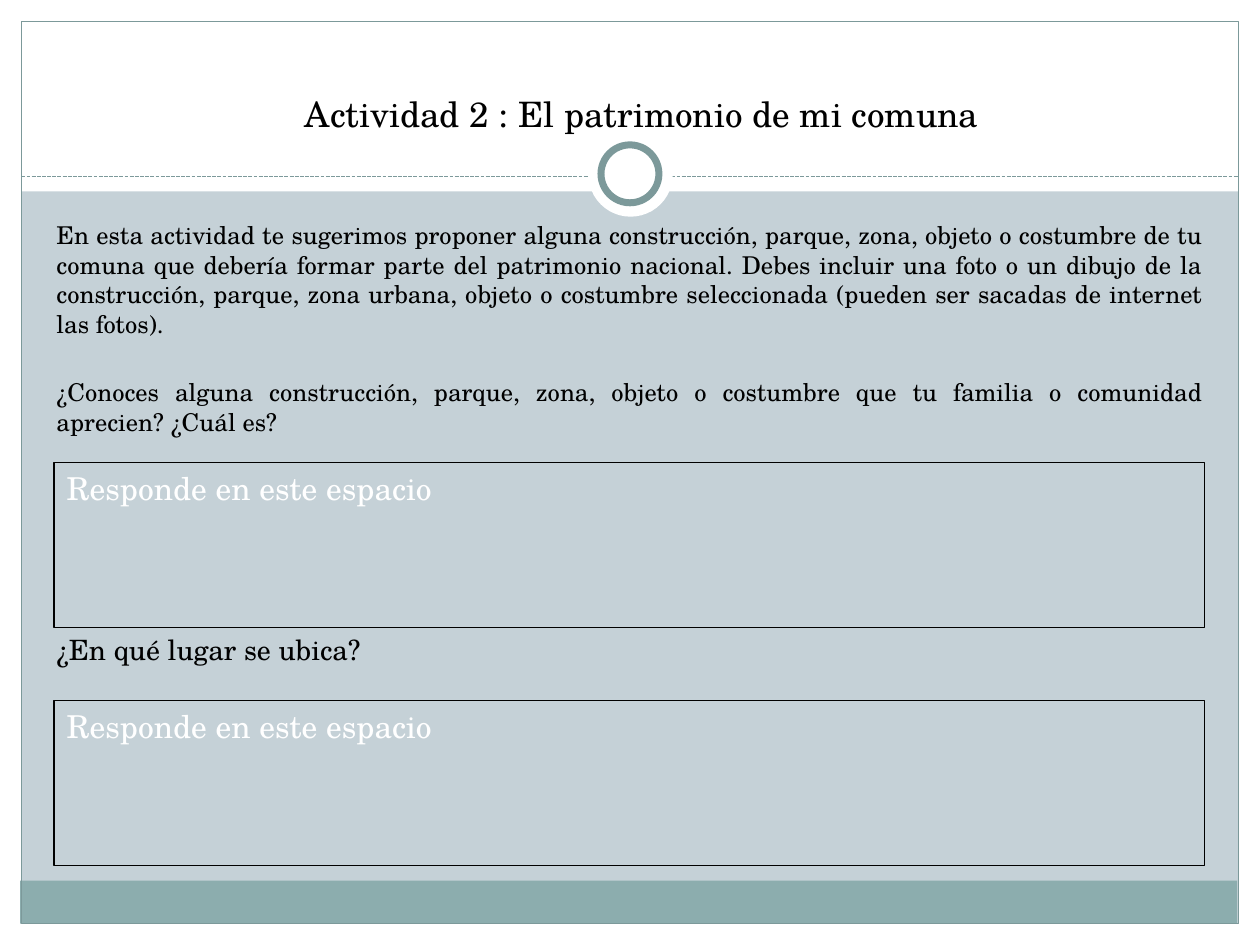
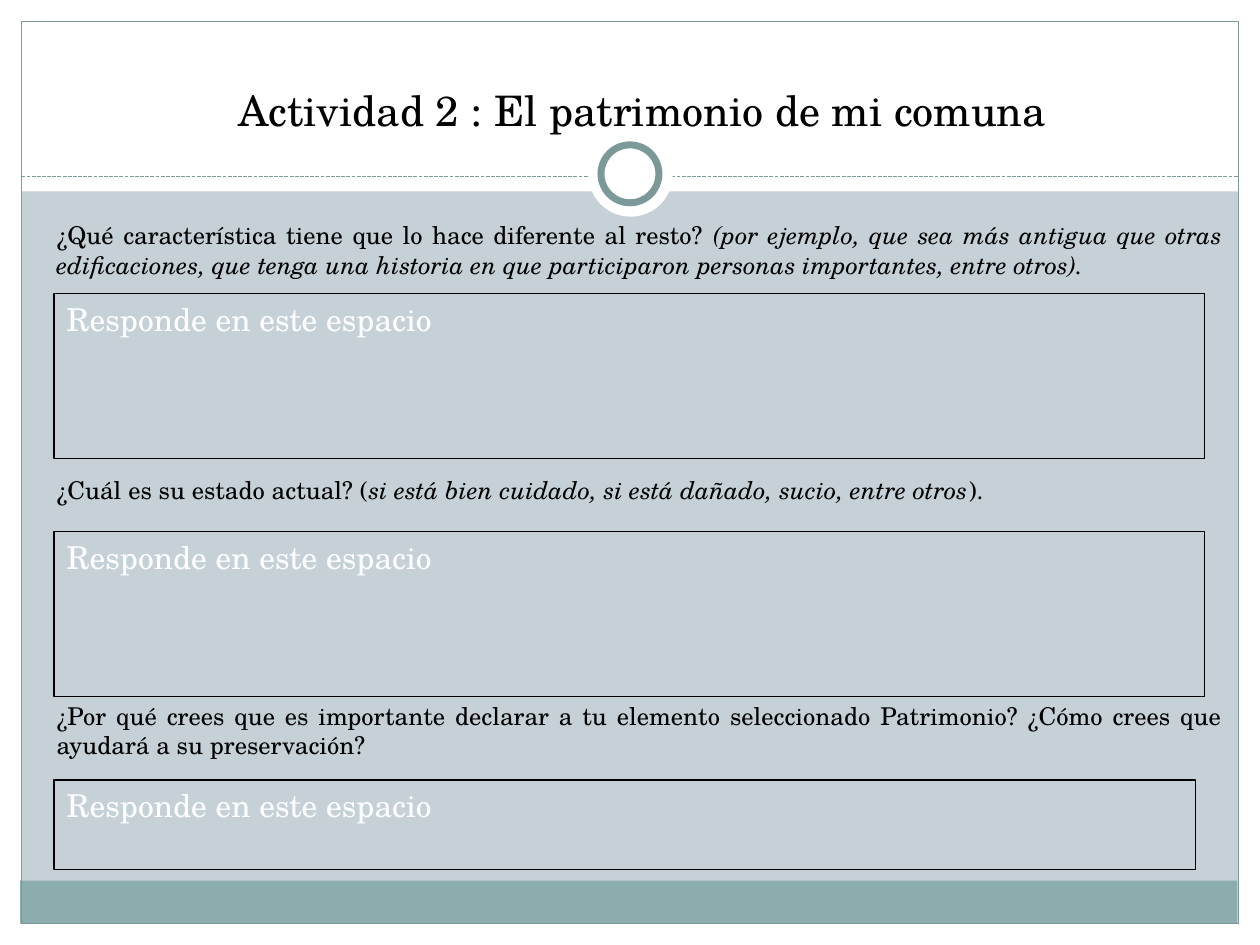
from pptx import Presentation
from pptx.dml.color import RGBColor
from pptx.enum.dml import MSO_LINE
from pptx.enum.shapes import MSO_CONNECTOR, MSO_SHAPE
from pptx.enum.text import MSO_ANCHOR, PP_ALIGN
from pptx.oxml.ns import qn
from pptx.util import Inches, Pt
from lxml.etree import SubElement

COLORS = {
    "background": "C5D1D7",
    "paper": "FFFFFF",
    "band": "8CADAE",
    "frame": "7C999A",
    "ink": "000000",
}
FONT = "TeX Gyre Schola"
TITLE = "Actividad 2 : El patrimonio de mi comuna"
ANSWER_PROMPT = "Responde en este espacio"
MARGINS = [(0, 7.33, 10, 0.17), (0, 0, 10, 1.52), (0, 0, 0.17, 7.5), (9.83, 0, 0.17, 7.5)]

WORKSHEETS = [
    {
        "title_size": 20,
        "body_size": (9.3, 5),
        "questions": [
            (14, 2.8, [("En esta actividad te sugerimos proponer alguna construcción, parque, zona, "
                        "objeto o costumbre de tu comuna que debería formar parte del patrimonio "
                        "nacional. Debes incluir una foto o un dibujo de la construcción, parque, "
                        "zona urbana, objeto o costumbre seleccionada (pueden ser sacadas de "
                        "internet las fotos).", False)]),
            (14, 22.4, [("¿Conoces alguna construcción, parque, zona, objeto o costumbre que tu "
                         "familia o comunidad aprecien? ¿Cuál es?", False)]),
            (16, 112.4, [("¿En qué lugar se ubica?", False)]),
        ],
        "answers": [(3.67, 9.13, 1.31), (5.56, 9.13, 1.31)],
    },
    {
        "title_size": 24,
        "body_size": (9.45, 5.2),
        "questions": [
            (14, 2.8, [("¿Qué característica tiene que lo hace diferente al resto? ", False),
                       ("(por ejemplo, que sea más antigua que otras edificaciones, que tenga una "
                        "historia en que participaron personas importantes, entre otros).", True)]),
            (14, 112, [("¿Cuál es su estado actual? (", False),
                       ("si está bien cuidado, si está dañado, sucio, entre otros", True),
                       (").", False)]),
            (14, 112, [("¿Por qué crees que es importante declarar a tu elemento seleccionado "
                        "Patrimonio? ¿Cómo crees que ayudará a su preservación?", False)]),
        ],
        "answers": [(2.33, 9.13, 1.31), (4.22, 9.13, 1.31), (6.19, 9.06, 0.71)],
    },
]


def color(name):
    return RGBColor.from_string(COLORS[name])


class Worksheet:
    def __init__(self, deck):
        self.deck = deck
        self.page = None

    def add_page(self):
        self.page = self.deck.slides.add_slide(self.deck.slide_layouts[6])
        fill = self.page.background.fill
        fill.solid()
        fill.fore_color.rgb = color("background")
        for margin in MARGINS:
            self.shape(margin, fill="paper")
        self.shape((0.16, 6.99, 9.66, 0.34), fill="band")
        self.shape((0.17, 0.17, 9.66, 7.16), line="frame")
        self.divider(1.4)
        self.shape((4.67, 1.05, 0.67, 0.67), MSO_SHAPE.OVAL, fill="paper")
        self.shape((4.77, 1.15, 0.46, 0.46), MSO_SHAPE.OVAL, "paper", "frame", 4)

    def shape(self, place, kind=MSO_SHAPE.RECTANGLE, fill=None, line=None, width=0.75):
        box = self.page.shapes.add_shape(kind, *map(Inches, place))
        box.shadow.inherit = False
        if fill:
            box.fill.solid()
            box.fill.fore_color.rgb = color(fill)
        else:
            box.fill.background()
        if line:
            box.line.color.rgb = color(line)
            box.line.width = Pt(width)
        else:
            box.line.fill.background()
        return box

    def divider(self, top):
        ends = map(Inches, (0.17, top, 9.83, top))
        divider = self.page.shapes.add_connector(MSO_CONNECTOR.STRAIGHT, *ends)
        divider.line.color.rgb = color("frame")
        divider.line.width = Pt(0.75)
        divider.line.dash_style = MSO_LINE.SQUARE_DOT
        SubElement(divider._element.spPr, qn("a:effectLst"))

    def text_box(self, place, anchor=MSO_ANCHOR.TOP):
        box = self.page.shapes.add_textbox(*map(Inches, place))
        box.text_frame.word_wrap = True
        box.text_frame.vertical_anchor = anchor
        return box.text_frame

    def span(self, para, text, ink="ink", **values):
        span = para.add_run()
        span.text = text
        for name, value in {"name": FONT, **values}.items():
            setattr(span.font, name, value)
        span.font.color.rgb = color(ink)

    def title(self, size):
        para = self.text_box((0.43, 0.17, 9.33, 0.95), MSO_ANCHOR.BOTTOM).paragraphs[0]
        para.alignment = PP_ALIGN.CENTER
        self.span(para, TITLE, size=Pt(size))

    def questions(self, body_size, questions):
        frame = self.text_box((0.35, 1.7, *body_size))
        for index, (size, gap, spans) in enumerate(questions):
            para = frame.add_paragraph() if index else frame.paragraphs[0]
            for name, value in {"alignment": PP_ALIGN.JUSTIFY, "space_before": Pt(gap)}.items():
                setattr(para, name, value)
            for text, italic in spans:
                self.span(para, text, size=Pt(size), italic=italic)

    def answer(self, top, width, height):
        frame = self.shape((0.43, top, width, height), line="ink").text_frame
        frame.word_wrap = True
        frame.vertical_anchor = MSO_ANCHOR.TOP
        para = frame.paragraphs[0]
        para.alignment = PP_ALIGN.LEFT
        self.span(para, ANSWER_PROMPT, "paper", size=Pt(18))


def main():
    deck = Presentation()
    deck.slide_width = Inches(10)
    deck.slide_height = Inches(7.5)
    worksheet = Worksheet(deck)
    for content in WORKSHEETS:
        worksheet.add_page()
        worksheet.questions(content["body_size"], content["questions"])
        worksheet.title(content["title_size"])
        for place in content["answers"]:
            worksheet.answer(*place)
    deck.save("out.pptx")


if __name__ == "__main__":
    main()
